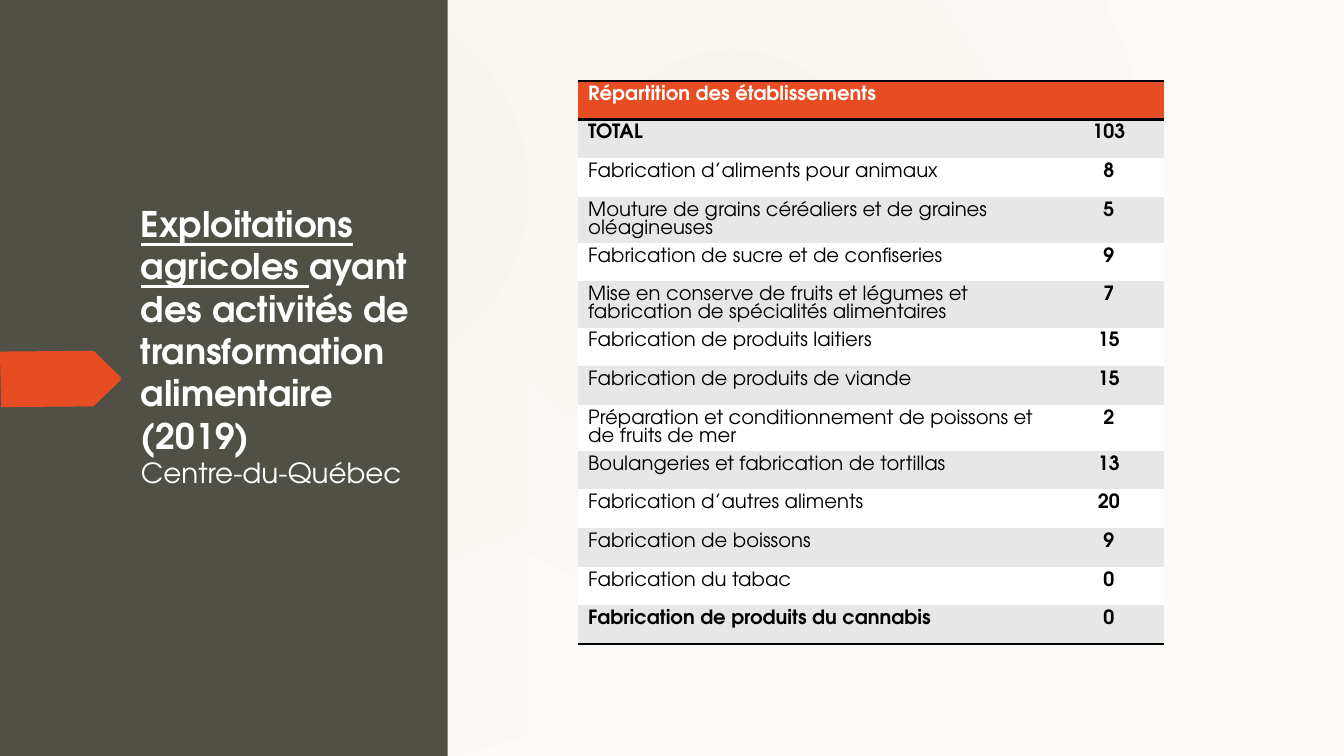
import dataclasses

import pptx
import pptx.dml.color
import pptx.enum.shapes
import pptx.enum.text
import pptx.oxml
import pptx.oxml.ns
import pptx.util

Cm = pptx.util.Cm
Pt = pptx.util.Pt
RGB = pptx.dml.color.RGBColor
qn = pptx.oxml.ns.qn

FONT = "TeX Gyre Adventor"
WHITE = RGB(0xFF, 0xFF, 0xFF)
BLACK = RGB(0x00, 0x00, 0x00)
OLIVE = RGB(0x50, 0x50, 0x46)
ORANGE = RGB(0xE8, 0x4C, 0x22)
GREY = RGB(0xE7, 0xE7, 0xE7)
SAND = RGB(0xF6, 0xF5, 0xF0)
CREAM = RGB(0xFB, 0xFA, 0xF7)
PLAIN = "{2D5ABB26-0587-4C30-8999-92F81FD0307C}"
NS = "http://schemas.openxmlformats.org/drawingml/2006/main"


@dataclasses.dataclass
class Row:
    label: str
    count: str
    bold: bool = False
    fill: RGB = WHITE
    ink: RGB = BLACK
    edges: tuple = ()


@dataclasses.dataclass
class Part:
    text: str
    size: float
    bold: bool = False
    line: bool = False


ROWS = [
    Row("Répartition des établissements", "", True, ORANGE, WHITE, ("lnT", "lnB")),
    Row("TOTAL", "103", True),
    Row("Fabrication d’aliments pour animaux", "8"),
    Row("Mouture de grains céréaliers et de graines oléagineuses", "5"),
    Row("Fabrication de sucre et de confiseries", "9"),
    Row("Mise en conserve de fruits et légumes et fabrication de spécialités alimentaires", "7"),
    Row("Fabrication de produits laitiers", "15"),
    Row("Fabrication de produits de viande", "15"),
    Row("Préparation et conditionnement de poissons et de fruits de mer", "2"),
    Row("Boulangeries et fabrication de tortillas", "13"),
    Row("Fabrication d’autres aliments", "20"),
    Row("Fabrication de boissons", "9"),
    Row("Fabrication du tabac", "0"),
    Row("Fabrication de produits du cannabis", "0", True, edges=("lnB",)),
]
for row in ROWS[1::2]:
    row.fill = GREY

TITLE = [
    [Part("Exploitations agricoles ", 25.2, True, True),
     Part("ayant des activités de transformation alimentaire (2019)", 25.2, True)],
    [Part("Centre-du-Québec", 19.8)],
]
ARROW = [(0, 8.86), (2.36, 8.84), (3.04, 9.5), (3.04, 9.58), (2.36, 10.24), (0.03, 10.26)]


def style(run, size: float, ink: RGB, bold: bool) -> None:
    run.font.name = FONT
    run.font.size = Pt(size)
    run.font.color.rgb = ink
    run.font.bold = bold


def shade(fill, root) -> None:
    """Give the fill, held in the element root, a circular gradient."""
    fill.gradient()
    for stop, tone in zip(fill.gradient_stops, (SAND, CREAM)):
        stop.color.rgb = tone
    for grad in root.iter(qn("a:gradFill")):
        grad.remove(grad.find(qn("a:lin")))
        grad.append(pptx.oxml.parse_xml(
            f'<a:path xmlns:a="{NS}" path="circle">'
            '<a:fillToRect l="50000" t="50000" r="100000" b="100000"/></a:path>'))


def panel(slide, left: float, width: float):
    box = slide.shapes.add_shape(
        pptx.enum.shapes.MSO_SHAPE.RECTANGLE, Cm(left), 0, Cm(width), Cm(19.05))
    box.shadow.inherit = False
    box.line.fill.background()
    return box


def arrow(slide) -> None:
    points = [(Cm(x), Cm(y)) for x, y in ARROW]
    pen = slide.shapes.build_freeform(*points[0])
    pen.add_line_segments(points[1:])
    shape = pen.convert_to_shape()
    shape.shadow.inherit = False
    shape.fill.solid()
    shape.fill.fore_color.rgb = ORANGE
    shape.line.fill.background()


def title(slide) -> None:
    frame = slide.shapes.add_textbox(Cm(3.3), Cm(4.97), Cm(7.75), Cm(8.38)).text_frame
    frame.word_wrap = True
    for i, parts in enumerate(TITLE):
        para = frame.add_paragraph() if i else frame.paragraphs[0]
        para.line_spacing = Pt(parts[0].size * 1.2)
        for part in parts:
            run = para.add_run()
            run.text = part.text
            style(run, part.size, WHITE, part.bold)
            run.font.underline = part.line


def border(cell, edges: tuple) -> None:
    props = cell._tc.get_or_add_tcPr()
    for i, edge in enumerate(edges):
        props.insert(i, pptx.oxml.parse_xml(
            f'<a:{edge} xmlns:a="{NS}" w="{Pt(2)}"><a:solidFill>'
            f'<a:srgbClr val="{BLACK}"/></a:solidFill></a:{edge}>'))


def write(cell, text: str, row: Row, bold: bool) -> None:
    cell.text_frame.text = text
    para = cell.text_frame.paragraphs[0]
    para.line_spacing = Pt(12.85)
    for run in para.runs:
        style(run, 14, row.ink, bold)
    if not text:
        para._p.append(pptx.oxml.parse_xml(f'<a:endParaRPr xmlns:a="{NS}" sz="1400"/>'))
    cell.fill.solid()
    cell.fill.fore_color.rgb = row.fill
    border(cell, row.edges)


def grid(slide) -> None:
    tall = Cm(13.63)
    frame = slide.shapes.add_table(
        len(ROWS), 2, Cm(14.57), Cm(2.04), Cm(14.77), tall)
    table = frame.table
    table.first_row = table.horz_banding = False
    next(table._tbl.iter(qn("a:tableStyleId"))).text = PLAIN
    for col, width in zip(table.columns, (11.98, 2.79)):
        col.width = Cm(width)
    for i, row in enumerate(ROWS):
        table.rows[i].height = tall // len(ROWS)
        write(table.cell(i, 0), row.label, row, row.bold)
        count = table.cell(i, 1)
        write(count, row.count, row, True)
        count.text_frame.paragraphs[0].alignment = pptx.enum.text.PP_ALIGN.CENTER


def main() -> None:
    deck = pptx.Presentation()
    deck.slide_width, deck.slide_height = Cm(33.87), Cm(19.05)
    slide = deck.slides.add_slide(deck.slide_layouts[6])
    shade(slide.background.fill, slide.element)
    side = panel(slide, 0, 11.28)
    side.fill.solid()
    side.fill.fore_color.rgb = OLIVE
    title(slide)
    arrow(slide)
    back = panel(slide, 13.31, 20.56)
    shade(back.fill, back.element)
    grid(slide)
    deck.save("out.pptx")


if __name__ == "__main__":
    main()
